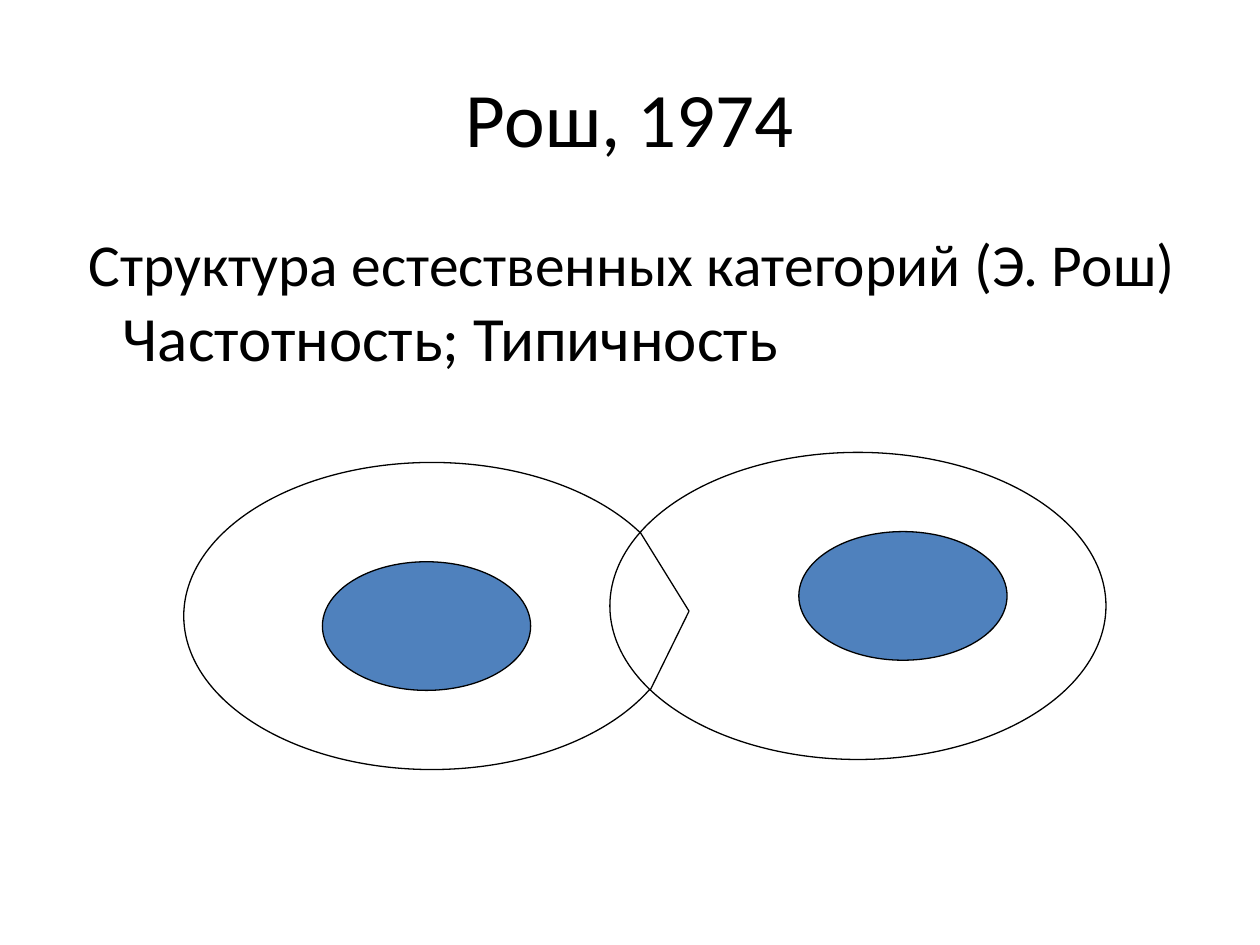
"""Build the slide on the structure of natural categories."""
from itertools import pairwise

from lxml.etree import SubElement
from pptx import Presentation
from pptx.dml.color import RGBColor
from pptx.enum.shapes import MSO_CONNECTOR as Connector, MSO_SHAPE as Shape
from pptx.enum.text import MSO_ANCHOR as Anchor, MSO_AUTO_SIZE as AutoSize, PP_ALIGN as Align
from pptx.oxml.ns import qn
from pptx.util import Pt

COLORS = {"text": "000000", "outline": "000000", "category": "FFFFFF", "core": "4F81BD"}
FONT = "Calibri"
HEADING = [("Рош, 1974", 44)]
STATEMENT = [(" Структура естественных категорий (Э. Рош) ", 34), ("Частотность; Типичность", 36)]
HEADING_BOX = (36, 21.6, 648, 90)
STATEMENT_BOX = (36, 126, 648, 356.4)
SIZES = {"category": (283.5, 175.5), "core": (119, 73.5)}
ELLIPSES = [
    ("category", 105, 264.25),
    ("core", 184.25, 321),
    ("category", 348.5, 258.5),
    ("core", 456.5, 303.75),
]
OVERLAP_EDGE = [(365.75, 304), (393.75, 349.25), (371.5, 394.5)]


def color(role):
    return RGBColor.from_string(COLORS[role])


def apply(target, values):
    for attribute, value in values.items():
        setattr(target, attribute, value)


def write(placeholder, box, runs, frame_format, paragraph_format):
    apply(placeholder, dict(zip(("left", "top", "width", "height"), map(Pt, box))))
    frame = placeholder.text_frame
    apply(frame, {"word_wrap": True, "auto_size": AutoSize.NONE, **frame_format})
    paragraph = frame.paragraphs[0]
    apply(paragraph, paragraph_format)
    for words, size in runs:
        run = paragraph.add_run()
        run.text = words
        apply(run.font, {"name": FONT, "size": Pt(size)})
        run.font.color.rgb = color("text")
    return paragraph


def outline(part):
    part.line.width = Pt(0.75)
    part.line.color.rgb = color("outline")


def main():
    deck = Presentation()
    apply(deck, {"slide_width": Pt(720), "slide_height": Pt(540)})
    slide = deck.slides.add_slide(deck.slide_layouts[1])
    heading, statement = slide.placeholders
    write(heading, HEADING_BOX, HEADING,
          {"vertical_anchor": Anchor.MIDDLE}, {"alignment": Align.CENTER})
    paragraph = write(statement, STATEMENT_BOX, STATEMENT,
                      {"vertical_anchor": Anchor.TOP},
                      {"alignment": Align.LEFT, "space_before": Pt(7)})
    properties = paragraph._p.get_or_add_pPr()
    for name, indent in {"marL": 27, "indent": -27}.items():
        properties.set(name, str(Pt(indent)))
    SubElement(properties, qn("a:buNone"))

    for role, left, top in ELLIPSES:
        ellipse = slide.shapes.add_shape(Shape.OVAL, *map(Pt, (left, top, *SIZES[role])))
        ellipse.shadow.inherit = False
        ellipse.fill.solid()
        ellipse.fill.fore_color.rgb = color(role)
        outline(ellipse)

    for start, end in pairwise(OVERLAP_EDGE):
        edge = slide.shapes.add_connector(Connector.STRAIGHT, *map(Pt, start + end))
        outline(edge)
        SubElement(edge._element.spPr, qn("a:effectLst"))

    deck.save("out.pptx")


if __name__ == "__main__":
    main()
